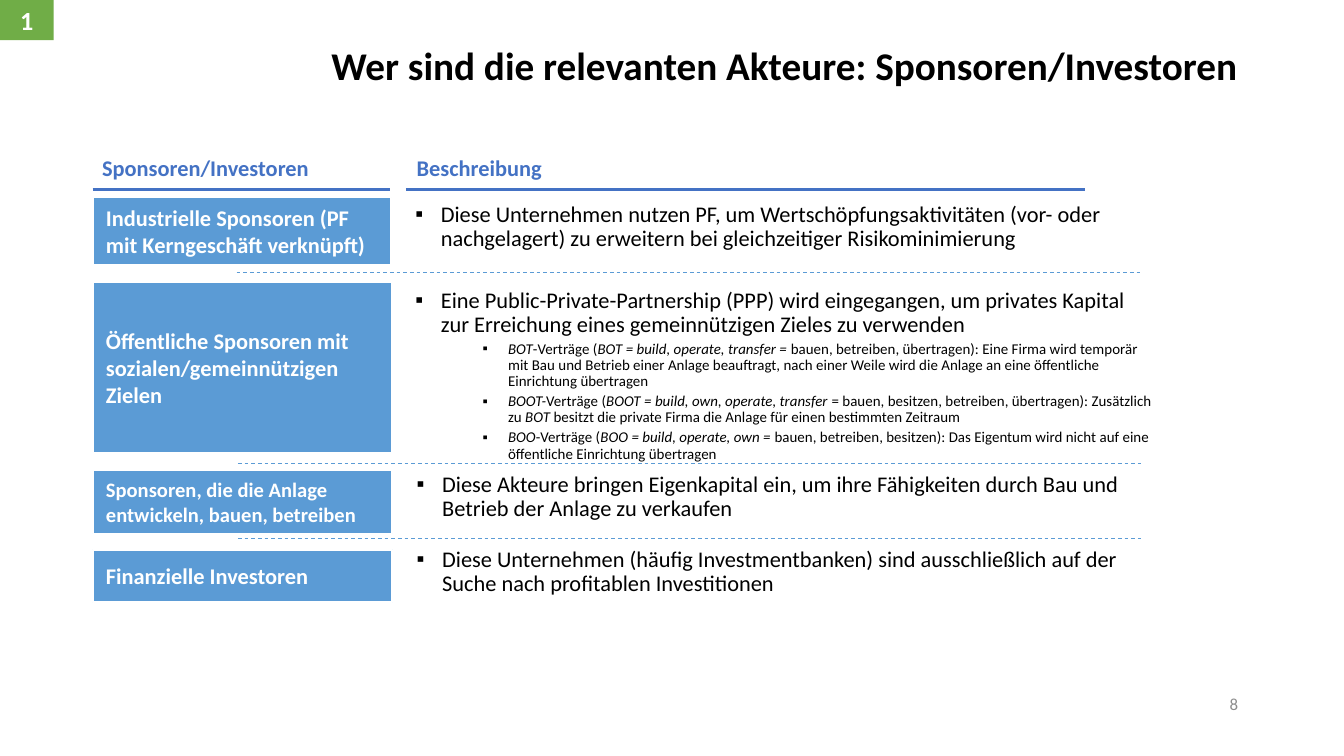
from dataclasses import dataclass

from lxml import etree
from pptx import Presentation
from pptx.dml.color import RGBColor
from pptx.enum.dml import MSO_LINE
from pptx.enum.shapes import MSO_CONNECTOR, MSO_SHAPE
from pptx.enum.text import MSO_ANCHOR, MSO_AUTO_SIZE, PP_ALIGN
from pptx.oxml.ns import qn
from pptx.util import Inches, Pt

STRAIGHT = MSO_CONNECTOR.STRAIGHT
RECTANGLE = MSO_SHAPE.RECTANGLE
DASH = MSO_LINE.DASH
TOP, MIDDLE = MSO_ANCHOR.TOP, MSO_ANCHOR.MIDDLE
LEFT, CENTER, RIGHT = PP_ALIGN.LEFT, PP_ALIGN.CENTER, PP_ALIGN.RIGHT
GROW, FIXED = MSO_AUTO_SIZE.SHAPE_TO_FIT_TEXT, MSO_AUTO_SIZE.NONE
COMPARISON_LAYOUT = 4


@dataclass(frozen=True)
class Theme:
    """Colours, font and type sizes of the deck."""
    font: str = "Calibri"
    ink: str = "000000"
    white: str = "FFFFFF"
    heading: str = "4472C4"
    label: str = "5B9BD5"
    badge: str = "70AD47"
    muted: str = "8C8C8C"
    title_size: int = 21
    badge_size: int = 14
    text_size: int = 12
    small_label_size: int = 11
    number_size: int = 9
    detail_size: int = 8


THEME = Theme()
MARGIN = 0.69
DESCRIPTION_LEFT = 3.02

CONTRACTS = [
    ["BOT", "-Verträge (", "BOT = build, operate, transfer = ",
     "bauen, betreiben, übertragen): Eine Firma wird temporär mit Bau und Betrieb einer Anlage "
     "beauftragt, nach einer Weile wird die Anlage an eine öffentliche Einrichtung übertragen"],
    ["BOOT-", "Verträge (", "BOOT = build, own, operate, transfer ",
     "= bauen, besitzen, betreiben, übertragen): Zusätzlich zu ", "BOT ",
     "besitzt die private Firma die Anlage für einen bestimmten Zeitraum"],
    ["BOO", "-Verträge (", "BOO = build, operate, own = ",
     "bauen, betreiben, besitzen): Das Eigentum wird nicht auf eine öffentliche Einrichtung übertragen"],
]

ROWS = [
    ("Industrielle Sponsoren (PF mit Kerngeschäft verknüpft)", THEME.text_size,
     (MARGIN, 1.47, 2.22, 0.5), (DESCRIPTION_LEFT, 1.47, 5.68, 0.44),
     "Diese Unternehmen nutzen PF, um Wertschöpfungsaktivitäten (vor- oder nachgelagert) "
     "zu erweitern bei gleichzeitiger Risikominimierung", []),
    ("Öffentliche Sponsoren mit sozialen/gemeinnützigen Zielen", THEME.text_size,
     (MARGIN, 2.1, 2.23, 1.27), (DESCRIPTION_LEFT, 2.11, 5.64, 1.37),
     "Eine Public-Private-Partnership (PPP) wird eingegangen, um privates Kapital "
     "zur Erreichung eines gemeinnützigen Zieles zu verwenden", CONTRACTS),
    ("Sponsoren, die die Anlage entwickeln, bauen, betreiben", THEME.small_label_size,
     (MARGIN, 3.5, 2.23, 0.47), (3.03, 3.48, 5.68, 0.44),
     "Diese Akteure bringen Eigenkapital ein, um ihre Fähigkeiten durch Bau und "
     "Betrieb der Anlage zu verkaufen", []),
    ("Finanzielle Investoren", THEME.text_size,
     (MARGIN, 4.09, 2.23, 0.39), (3.03, 4.04, 5.68, 0.44),
     "Diese Unternehmen (häufig Investmentbanken) sind ausschließlich auf der "
     "Suche nach profitablen Investitionen", []),
]


def to_inches(box):
    """Convert a box of plain numbers to lengths."""
    return [Inches(value) for value in box]


def style_runs(para, size, color, bold=False):
    """Format every run of a paragraph."""
    for span in para.runs:
        span.font.name = THEME.font
        span.font.size = Pt(size)
        span.font.bold = bold
        span.font.color.rgb = RGBColor.from_string(color)


def write_line(shape, text, size, color, bold=True, align=LEFT, anchor=MIDDLE):
    """Put one formatted paragraph into a shape."""
    frame = shape.text_frame
    frame.text = text
    frame.word_wrap = True
    frame.vertical_anchor = anchor
    para = frame.paragraphs[0]
    para.alignment = align
    style_runs(para, size, color, bold)
    return para


def set_narrow_insets(frame):
    """Give a text frame the narrow inner margins of the table area."""
    frame.margin_left = frame.margin_right = Inches(0.07)
    frame.margin_top = frame.margin_bottom = Inches(0.04)


def add_rule(page, left, top, width, color, weight, dash=None):
    """Draw a horizontal line."""
    rule = page.shapes.add_connector(STRAIGHT, *to_inches((left, top, left + width, top)))
    rule.line.color.rgb = RGBColor.from_string(color)
    rule.line.width = Pt(weight)
    if dash:
        rule.line.dash_style = dash
    etree.SubElement(rule._element.spPr, qn("a:effectLst"))


def add_block(page, box, fill, outline=None):
    """Draw a filled rectangle."""
    block = page.shapes.add_shape(RECTANGLE, *to_inches(box))
    block.shadow.inherit = False
    block.fill.solid()
    block.fill.fore_color.rgb = RGBColor.from_string(fill)
    if outline:
        block.line.color.rgb = RGBColor.from_string(outline)
        block.line.width = Pt(1)
    else:
        block.line.fill.background()
    return block


def place(shape, box):
    """Move a placeholder into a box."""
    shape.left, shape.top, shape.width, shape.height = to_inches(box)


def add_title(page, box, text):
    """Fill the title placeholder."""
    title = page.shapes.title
    place(title, box)
    para = write_line(title, text, THEME.title_size, THEME.ink, align=RIGHT, anchor=TOP)
    para.line_spacing = 0.9
    title.text_frame.auto_size = FIXED


def add_column_heading(page, box, text, rule_left, rule_width):
    """Write a column heading above its rule."""
    left, top, width, height = box
    add_rule(page, rule_left, top + 0.26, rule_width, THEME.heading, 1.5)
    heading = page.shapes.add_textbox(*to_inches(box))
    para = write_line(heading, text, THEME.text_size, THEME.heading)
    para.line_spacing = 0.9
    set_narrow_insets(heading.text_frame)


def format_bullet(para, indent, space_before):
    """Set a square bullet with a hanging indent."""
    para.alignment = LEFT
    para.line_spacing = 0.9
    para.space_before = Pt(space_before)
    properties = para._p.get_or_add_pPr()
    properties.set("marL", str(Inches(indent)))
    properties.set("indent", str(-Inches(0.19)))
    color = etree.SubElement(properties, qn("a:buClr"))
    etree.SubElement(color, qn("a:srgbClr"), val=THEME.ink)
    etree.SubElement(properties, qn("a:buFont"), typeface="Arial")
    etree.SubElement(properties, qn("a:buChar"), char="▪")


def add_description(body, box, text, details):
    """Fill a body placeholder with a bullet and its sub-bullets."""
    place(body, box)
    frame = body.text_frame
    set_narrow_insets(frame)
    para = write_line(body, text, THEME.text_size, THEME.ink, bold=False, anchor=TOP)
    format_bullet(para, 0.19, 0)
    for parts in details:
        para = frame.add_paragraph()
        para.level = 1
        format_bullet(para, 0.69, 2.2)
        for index, part in enumerate(parts):
            span = para.add_run()
            span.text = part
            span.font.italic = index % 2 == 0
        style_runs(para, THEME.detail_size, THEME.ink)
    frame.auto_size = GROW


def add_row(page, body, label, size, label_box, body_box, text, details):
    """Place one investor label with its description."""
    block = add_block(page, label_box, THEME.label, THEME.white)
    write_line(block, label, size, THEME.white)
    add_description(body, body_box, text, details)


def add_page_marks(page, badge_box, number_box):
    """Place the chapter badge and the page number."""
    badge = add_block(page, badge_box, THEME.badge)
    write_line(badge, "1", THEME.badge_size, THEME.white, align=CENTER)
    number = page.shapes.add_textbox(*to_inches(number_box))
    write_line(number, "8", THEME.number_size, THEME.muted, bold=False, align=RIGHT)


def main():
    """Build and save the deck."""
    deck = Presentation()
    deck.slide_width, deck.slide_height = Inches(10), Inches(10 * 9 / 16)
    page = deck.slides.add_slide(deck.slide_layouts[COMPARISON_LAYOUT])
    title, *bodies = page.placeholders
    add_title(page, (MARGIN, 0.3, 8.62, 0.43),
              "Wer sind die relevanten Akteure: Sponsoren/Investoren")
    add_column_heading(page, (MARGIN, 1.15, 2.33, 0.22), "Sponsoren/Investoren", MARGIN, 2.21)
    add_column_heading(page, (3.03, 1.15, 4.46, 0.22), "Beschreibung", DESCRIPTION_LEFT, 5.05)
    for body, row in zip(bodies, ROWS):
        add_row(page, body, *row)
    for left, top in ((1.76, 2.03), (1.77, 3.45), (1.77, 4.01)):
        add_rule(page, left, top, 6.72, THEME.label, 0.5, DASH)
    add_page_marks(page, (0, 0, 0.4, 0.3), (7.06, 5.09, 2.25, 0.3))
    deck.save("out.pptx")


if __name__ == "__main__":
    main()
